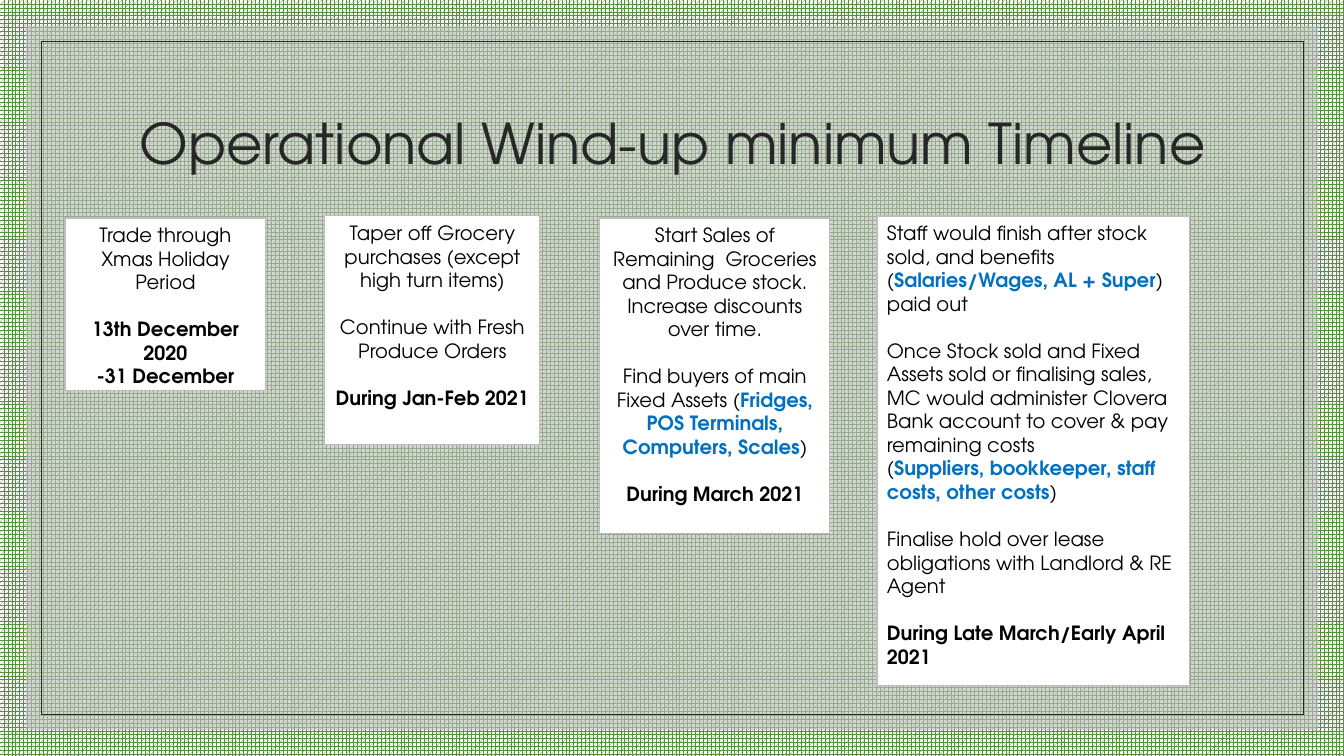
from pptx import Presentation
from pptx.dml.color import RGBColor
from pptx.enum.dml import MSO_PATTERN
from pptx.enum.shapes import MSO_SHAPE as SHAPE
from pptx.enum.text import MSO_ANCHOR as ANCHOR, PP_ALIGN as ALIGN
from pptx.oxml.ns import qn
from pptx.oxml.xmlchemy import OxmlElement
from pptx.util import Pt

PX = 914400 / 100.8
GREEN = RGBColor(0x57, 0x90, 0x3F)
WHITE = RGBColor(0xFF, 0xFF, 0xFF)
BLACK = RGBColor(0x00, 0x00, 0x00)
CHARCOAL = RGBColor(0x26, 0x26, 0x26)
GREY = RGBColor(0xBF, 0xBF, 0xBF)
BORDER = RGBColor(0xBD, 0xBD, 0xBD)
BLUE = RGBColor(0x00, 0x70, 0xC0)

PLAIN = dict(size=14, bold=False, color=BLACK)
BOLD = dict(size=14, bold=True, color=BLACK)
KEY = dict(size=14, bold=True, color=BLUE)
TITLE = dict(size=40, bold=False, color=CHARCOAL)

STAGES = [
    ((65, 218, 201, 173), ALIGN.CENTER, [
        [[("Trade through Xmas Holiday Period", PLAIN)]],
        [[("13th December 2020", BOLD)], [("-31 December", BOLD)]],
    ]),
    ((325, 216, 215, 229), ALIGN.CENTER, [
        [[("Taper off Grocery purchases (except high turn items)", PLAIN)]],
        [[("Continue with Fresh Produce Orders", PLAIN)]],
        [[("During Jan-Feb 2021", BOLD)]],
    ]),
    ((600, 218, 230, 316), ALIGN.CENTER, [
        [[("Start Sales of Remaining  Groceries and Produce stock.", PLAIN)],
         [("Increase discounts over time.", PLAIN)]],
        [[("Find buyers of main Fixed Assets (", PLAIN),
          ("Fridges, POS Terminals, Computers, Scales", KEY), (")", PLAIN)]],
        [[("During March 2021", BOLD)]],
    ]),
    ((877, 216, 313, 470), ALIGN.LEFT, [
        [[("Staff would finish after stock sold, and benefits (", PLAIN),
          ("Salaries/Wages, AL + Super", KEY), (") paid out", PLAIN)]],
        [[("Once Stock sold and Fixed Assets sold or finalising sales, "
           "MC would administer Clovera", PLAIN)],
         [("Bank account to cover & pay remaining costs", PLAIN)],
         [("(", PLAIN), ("Suppliers, bookkeeper, staff costs, other costs", KEY),
          (")", PLAIN)]],
        [[("Finalise hold over lease obligations with Landlord & RE Agent", PLAIN)]],
        [[("During Late March/Early April 2021", BOLD)]],
    ]),
]


def px(*lengths):
    return [round(n * PX) for n in lengths]


class Deck:
    font = "TeX Gyre Adventor"
    gap = Pt(16.8)

    def __init__(self, width, height):
        self.prs = Presentation()
        self.prs.slide_width, self.prs.slide_height = px(width, height)
        self.slide = self.prs.slides.add_slide(self.prs.slide_layouts[6])

    def background(self, pattern, fore, back):
        fill = self.slide.background.fill
        fill.patterned()
        fill.pattern = pattern
        fill.fore_color.rgb = fore
        fill.back_color.rgb = back

    def rect(self, box, fill=None, line=None, weight=0.75, alpha=None):
        s = self.slide.shapes.add_shape(SHAPE.RECTANGLE, *px(*box))
        s.shadow.inherit = False
        if fill is None:
            s.fill.background()
        else:
            s.fill.solid()
            s.fill.fore_color.rgb = fill
        if alpha is not None:
            el = OxmlElement("a:alpha")
            el.set("val", str(alpha * 1000))
            s.element.spPr.find(qn("a:solidFill"))[0].append(el)
        if line is None:
            s.line.fill.background()
        else:
            s.line.color.rgb = line
            s.line.width = Pt(weight)
        return s

    def text(self, s, blocks, align, anchor, spacing=None):
        tf = s.text_frame
        for name, value in dict(word_wrap=True, vertical_anchor=anchor).items():
            setattr(tf, name, value)
        p = None
        for i, block in enumerate(blocks):
            for j, runs in enumerate(block):
                p = tf.paragraphs[0] if p is None else tf.add_paragraph()
                before = self.gap if i and not j else Pt(0)
                style = dict(alignment=align, line_spacing=spacing, space_before=before)
                for name, value in style.items():
                    setattr(p, name, value)
                for words, look in runs:
                    self.run(p, words, look)

    def run(self, p, words, look):
        r = p.add_run()
        r.text = words
        style = dict(name=self.font, size=Pt(look["size"]), bold=look["bold"])
        for name, value in style.items():
            setattr(r.font, name, value)
        r.font.color.rgb = look["color"]

    def title(self, box, words):
        s = self.slide.shapes.add_textbox(*px(*box))
        self.text(s, [[[(words, TITLE)]]], ALIGN.CENTER, ANCHOR.MIDDLE, 0.9)

    def stage(self, box, align, blocks):
        s = self.rect(box, WHITE, BORDER)
        self.text(s, blocks, align, ANCHOR.TOP)


def main():
    deck = Deck(1344, 756)
    deck.background(MSO_PATTERN.SPHERE, GREEN, WHITE)
    deck.rect((26, 26, 1292, 704), fill=GREY, alpha=60)
    deck.rect((41, 41, 1262, 673), line=CHARCOAL, weight=0.5)
    deck.title((118, 71, 1109, 151), "Operational Wind-up minimum Timeline")
    for box, align, blocks in STAGES:
        deck.stage(box, align, blocks)
    deck.prs.save("out.pptx")


if __name__ == "__main__":
    main()
